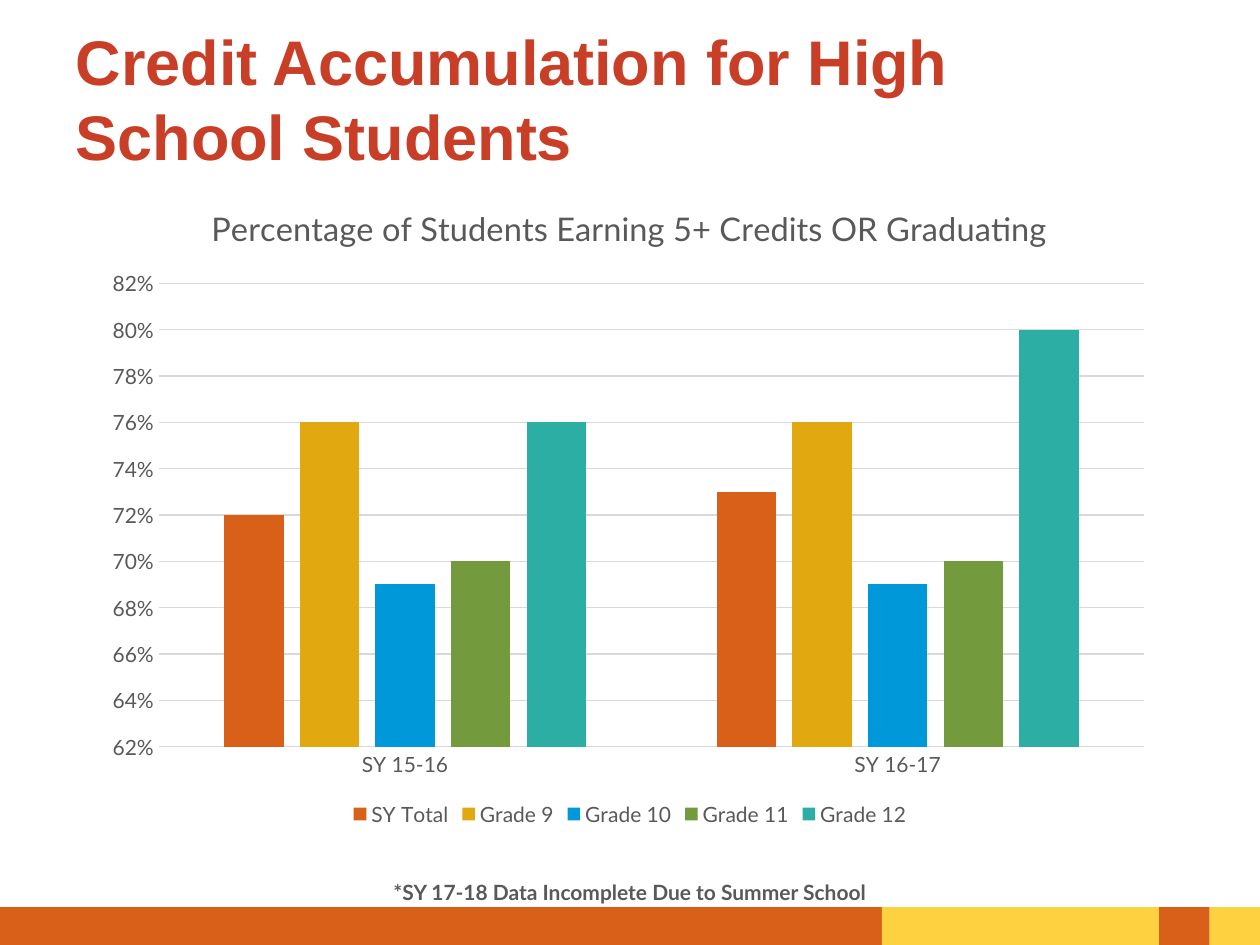
from lxml import etree
from pptx import Presentation
from pptx.chart.data import CategoryChartData
from pptx.dml.color import RGBColor
from pptx.enum.chart import XL_CHART_TYPE, XL_LEGEND_POSITION, XL_TICK_MARK
from pptx.enum.shapes import MSO_SHAPE
from pptx.enum.text import MSO_ANCHOR, PP_ALIGN
from pptx.oxml.ns import qn
from pptx.util import Inches, Pt

COLUMN = XL_CHART_TYPE.COLUMN_CLUSTERED
BOTTOM = XL_LEGEND_POSITION.BOTTOM
NO_TICK = XL_TICK_MARK.NONE
RECT = MSO_SHAPE.RECTANGLE
LEFT, CENTER = PP_ALIGN.LEFT, PP_ALIGN.CENTER
MIDDLE, LOW = MSO_ANCHOR.MIDDLE, MSO_ANCHOR.BOTTOM

# Content
TITLE = "Credit Accumulation for High School Students"
HEADING = "Percentage of Students Earning 5+ Credits OR Graduating"
NOTE = "*SY 17-18 Data Incomplete Due to Summer School"
YEARS = ["SY 15-16", "SY 16-17"]
SERIES = [  # name, share per year, colour
    ("SY Total", (0.72, 0.73), "D86018"),
    ("Grade 9", (0.76, 0.76), "E1A810"),
    ("Grade 10", (0.69, 0.69), "0098D8"),
    ("Grade 11", (0.70, 0.70), "739B3E"),
    ("Grade 12", (0.76, 0.80), "2CAEA4"),
]
STRIPES = [(7, "D86018"), (2.2, "FED141"), (0.4, "D86018"), (0.4, "FED141")]
PLOT = {"x": 0.06, "y": 0.16, "w": 0.92, "h": 0.71}  # shares of the chart

THEME = {
    "head": "Arial", "body": "Lato",
    "red": "C83E27", "gray": "595959", "grid": "D9D9D9",
    "big": 36, "mid": 18.6, "small": 12,
}


def color(code):
    return RGBColor.from_string(code)


def style(font, size, code=THEME["gray"], face=THEME["body"], bold=False):
    font.name, font.size, font.bold = face, Pt(size), bold
    font.color.rgb = color(code)


def write(shape, text, pad=0, align=LEFT, anchor=MIDDLE, **look):
    frame = shape.text_frame
    frame.word_wrap = True
    frame.vertical_anchor = anchor
    frame.margin_left = frame.margin_right = Inches(0.1)
    frame.margin_top = frame.margin_bottom = Inches(pad)
    para = frame.paragraphs[0]
    para.alignment = align
    run = para.add_run()
    run.text = text
    style(run.font, **look)


def place(shape, *box):
    shape.left, shape.top, shape.width, shape.height = map(Inches, box)


def rule(line):
    line.color.rgb = color(THEME["grid"])
    line.width = Pt(0.75)


def fix_plot(chart):
    area = chart._chartSpace.chart.plotArea
    for old in area.findall(qn("c:layout")):
        area.remove(old)
    layout = etree.Element(qn("c:layout"))
    area.insert(0, layout)
    manual = etree.SubElement(layout, qn("c:manualLayout"))
    parts = [("layoutTarget", "inner"), ("xMode", "edge"), ("yMode", "edge")]
    for tag, val in parts + list(PLOT.items()):
        etree.SubElement(manual, qn(f"c:{tag}")).set("val", str(val))


def add_bars(slide):
    data = CategoryChartData(number_format="0%")
    data.categories = YEARS
    for name, shares, _ in SERIES:
        data.add_series(name, shares)
    box = map(Inches, (0.75, 1.42, 8.5, 5.18))
    chart = slide.shapes.add_chart(COLUMN, *box, data).chart
    style(chart.font, THEME["small"])

    # Heading and legend
    chart.has_title = True
    para = chart.chart_title.text_frame.paragraphs[0]
    run = para.add_run()
    run.text = HEADING
    style(run.font, THEME["mid"])
    chart.chart_title.include_in_layout = False
    chart.has_legend = True
    chart.legend.position = BOTTOM
    chart.legend.include_in_layout = False
    style(chart.legend.font, THEME["small"])

    # Axes
    years, scale = chart.category_axis, chart.value_axis
    for axis in (years, scale):
        axis.major_tick_mark = axis.minor_tick_mark = NO_TICK
        style(axis.tick_labels.font, THEME["small"])
    rule(years.format.line)
    scale.format.line.fill.background()
    scale.has_major_gridlines = True
    rule(scale.major_gridlines.format.line)
    scale.minimum_scale, scale.maximum_scale = 0.62, 0.82
    scale.major_unit = 0.02
    scale.tick_labels.number_format = "0%"
    scale.tick_labels.number_format_is_linked = False

    # Bars
    plot = chart.plots[0]
    plot.gap_width, plot.overlap = 219, -27
    plot.vary_by_categories = False
    for bars, (_, _, code) in zip(plot.series, SERIES):
        bars.format.fill.solid()
        bars.format.fill.fore_color.rgb = color(code)
        bars.invert_if_negative = False
    fix_plot(chart)


def add_stripes(slide):
    left = 0
    for width, code in STRIPES:
        box = map(Inches, (left, 7.2, width, 0.3))
        stripe = slide.shapes.add_shape(RECT, *box)
        stripe.shadow.inherit = False
        stripe.fill.solid()
        stripe.fill.fore_color.rgb = color(code)
        stripe.line.fill.background()
        left += width


def main():
    deck = Presentation()
    deck.slide_width, deck.slide_height = Inches(10), Inches(7.5)
    slide = deck.slides.add_slide(deck.slide_layouts[5])
    add_stripes(slide)

    title = slide.shapes.title
    place(title, 0.5, 0.25, 8.5, 1.05)
    write(title, TITLE, size=THEME["big"], code=THEME["red"],
          face=THEME["head"], bold=True)

    add_bars(slide)

    note = slide.shapes.add_textbox(*map(Inches, (0.75, 6.9, 8.5, 0.3)))
    write(note, NOTE, pad=0.02, align=CENTER, anchor=LOW,
          size=THEME["small"], bold=True)
    deck.save("out.pptx")


if __name__ == "__main__":
    main()
